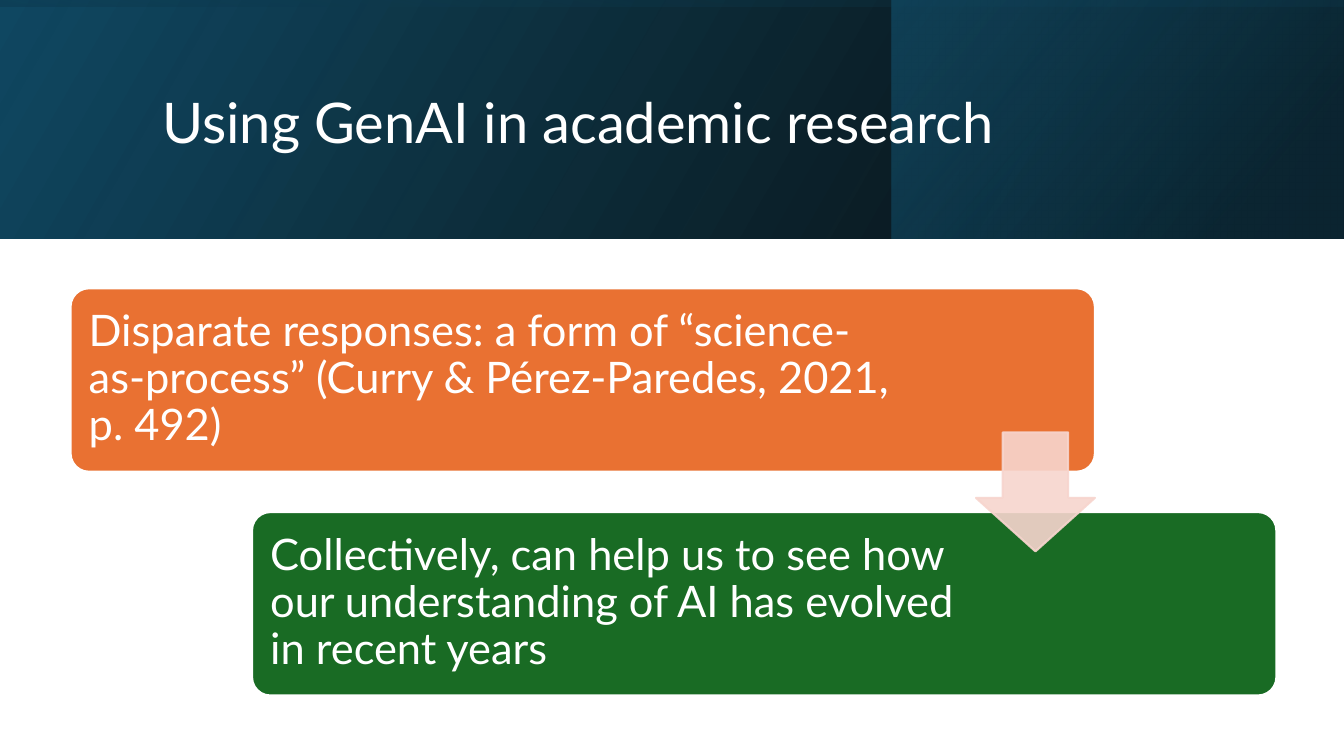
from pptx import Presentation
from pptx.dml.color import RGBColor
from pptx.enum.shapes import MSO_SHAPE
from pptx.enum.text import MSO_ANCHOR, MSO_AUTO_SIZE, PP_ALIGN
from pptx.oxml import parse_xml
from pptx.oxml.ns import nsdecls, qn
from pptx.util import Inches, Pt


def rgb(value):
    return RGBColor.from_string(value)


def apply(target, formats):
    for name, value in formats.items():
        setattr(target, name, value)


class Deck:
    FONT = "Lato"
    INK = "FFFFFF"
    LINE_WIDTH = 1.5

    def __init__(self, width, height):
        self.prs = Presentation()
        apply(self.prs, {"slide_width": Inches(width), "slide_height": Inches(height)})
        self.slide = self.prs.slides.add_slide(self.prs.slide_layouts[5])

    def shape(self, kind, box, adjustments=()):
        shape = self.slide.shapes.add_shape(kind, *map(Inches, box))
        shape.shadow.inherit = False
        for index, value in enumerate(adjustments):
            shape.adjustments[index] = value
        return shape

    def band(self, box, stops, angle, rotation=0):
        band = self.shape(MSO_SHAPE.RECTANGLE, box)
        band.rotation = rotation
        band.line.fill.background()
        properties = band._element.spPr
        properties.find(qn("a:xfrm")).set("flipH", "1")
        marks = "".join(
            f'<a:gs pos="{position * 1000}"><a:srgbClr val="{color}">'
            f'<a:alpha val="{opacity * 1000}"/></a:srgbClr></a:gs>'
            for position, color, opacity in stops
        )
        gradient = parse_xml(
            f'<a:gradFill {nsdecls("a")} rotWithShape="1"><a:gsLst>{marks}</a:gsLst>'
            f'<a:lin ang="{angle * 60000}" scaled="0"/></a:gradFill>'
        )
        properties.find(qn("a:prstGeom")).addnext(gradient)

    def solid(self, kind, box, adjustments, fill, line, opacity=100):
        shape = self.shape(kind, box, adjustments)
        shape.fill.solid()
        shape.fill.fore_color.rgb = rgb(fill)
        shape.line.color.rgb = rgb(line)
        shape.line.width = Pt(self.LINE_WIDTH)
        if opacity < 100:
            for color in shape._element.spPr.iter(qn("a:srgbClr")):
                color.append(parse_xml(f'<a:alpha {nsdecls("a")} val="{opacity * 1000}"/>'))

    def fill_text(self, holder, text, size, inset=None):
        frame = holder.text_frame
        frame.text = text
        apply(frame, {"word_wrap": True, "auto_size": MSO_AUTO_SIZE.NONE,
                      "vertical_anchor": MSO_ANCHOR.MIDDLE})
        if inset is not None:
            sides = ("margin_left", "margin_top", "margin_right", "margin_bottom")
            apply(frame, dict.fromkeys(sides, Inches(inset)))
        paragraph = frame.paragraphs[0]
        apply(paragraph, {"alignment": PP_ALIGN.LEFT, "line_spacing": 0.9})
        font = paragraph.runs[0].font
        apply(font, {"name": self.FONT, "size": Pt(size)})
        font.color.rgb = rgb(self.INK)

    def title(self, text, box, size):
        title = self.slide.shapes.title
        apply(title, dict(zip(("left", "top", "width", "height"), map(Inches, box))))
        self.fill_text(title, text, size)
        self.slide.shapes._spTree.append(title._element)

    def card(self, box, fill, text, text_width):
        left, top, _, height = box
        self.solid(MSO_SHAPE.ROUNDED_RECTANGLE, box, [0.1], fill, self.INK)
        label = self.slide.shapes.add_textbox(
            *map(Inches, (left + 0.05, top + 0.05, text_width, height - 0.11)))
        self.fill_text(label, text, 31, 0.13)


def main():
    width, band_height = 13.33, 2.37
    deck = Deck(width, 7.5)
    deck.band((0, 0, width, band_height), [(0, "000000", 96), (100, "104862", 100)], 330)
    deck.band((8.84, 0, 4.48, band_height), [(19, "0B3041", 68), (100, "156082", 48)], 320)
    offset = (width - band_height) / 2
    deck.band((offset, -offset, band_height, width),
              [(23, "104862", 16), (99, "000000", 45)], 350, 270)
    deck.title("Using GenAI in academic research", (1.51, 0.38, 10.63, 1.72), 40)

    steps = [
        ("E97132", "Disparate responses: a form of “science-as-process” "
                   "(Curry & Pérez-Paredes, 2021, p. 492)", 8.28),
        ("196B24", "Collectively, can help us to see how our understanding of AI "
                   "has evolved in recent years", 7.08),
    ]
    for index, (fill, text, text_width) in enumerate(steps):
        deck.card((0.7 + 1.8 * index, 2.86 + 2.22 * index, 10.16, 1.82), fill, text, text_width)
    deck.solid(MSO_SHAPE.DOWN_ARROW, (9.68, 4.29, 1.18, 1.18), [0.55, 0.45],
               "F7D5CE", "F7D5CE", 90)
    deck.prs.save("out.pptx")


if __name__ == "__main__":
    main()
